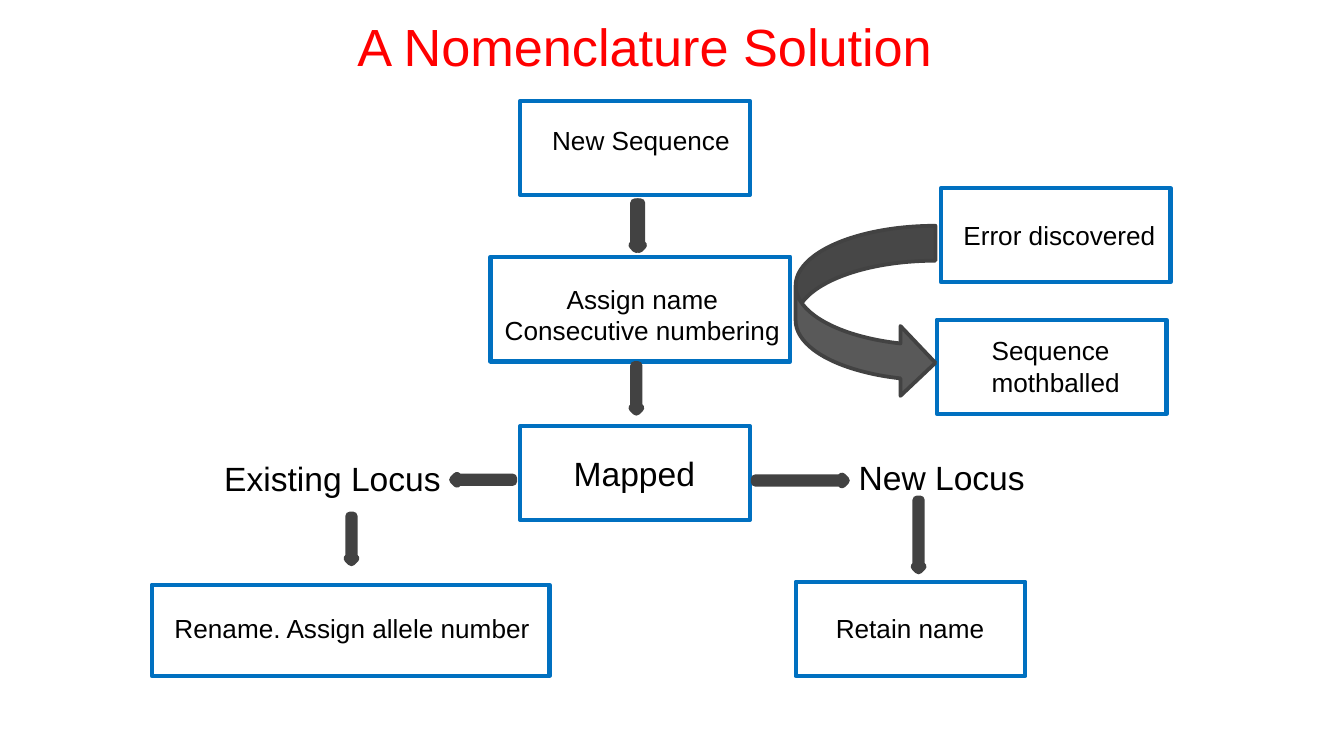
from pptx import Presentation
from pptx.dml.color import RGBColor
from pptx.enum.shapes import MSO_SHAPE as Shape
from pptx.enum.text import MSO_AUTO_SIZE as AutoSize, PP_ALIGN as Align
from pptx.util import Inches, Pt

COLORS = {"title": "FF0000", "text": "000000", "border": "0070C0",
          "arrow": "595959", "arrow_edge": "424242"}
BOX_WIDTH, BOX_HEIGHT = 1.71, 0.7
ARROW_WIDTH = 0.05


def write_text(frame, text, size=14, color="text", align=Align.LEFT, font="Arial"):
    for index, line in enumerate(text.split("\n")):
        para = frame.paragraphs[0] if index == 0 else frame.add_paragraph()
        para.alignment = align
        span = para.add_run()
        span.text = line
        span.font.name = font
        span.font.size = Pt(size)
        span.font.color.rgb = RGBColor.from_string(COLORS[color])


class FlowPage:
    """Draws the flowchart elements on one slide in a shared style."""

    def __init__(self, page):
        self.page = page

    def shape(self, kind, bounds, fill, edge, weight):
        shape = self.page.shapes.add_shape(kind, *map(Inches, bounds))
        shape.shadow.inherit = False
        if fill:
            shape.fill.solid()
            shape.fill.fore_color.rgb = RGBColor.from_string(COLORS[fill])
        else:
            shape.fill.background()
        shape.line.color.rgb = RGBColor.from_string(COLORS[edge])
        shape.line.width = Pt(weight)
        return shape

    def box(self, left, top, width=BOX_WIDTH, height=BOX_HEIGHT):
        return self.shape(Shape.RECTANGLE, (left, top, width, height), None, "border", 2.25)

    def label(self, text, bounds, **style):
        box = self.page.shapes.add_textbox(*map(Inches, bounds))
        box.text_frame.word_wrap = False
        box.text_frame.auto_size = AutoSize.SHAPE_TO_FIT_TEXT
        write_text(box.text_frame, text, **style)

    def arrow(self, left, top, length=0.34, rotation=0):
        bounds = (left, top, ARROW_WIDTH, length)
        arrow = self.shape(Shape.DOWN_ARROW, bounds, "arrow", "arrow_edge", 4.75)
        arrow.rotation = rotation

    def curved_arrow(self, bounds):
        self.shape(Shape.CURVED_RIGHT_ARROW, bounds, "arrow", "arrow_edge", 2)


def main():
    deck = Presentation()
    deck.slide_width, deck.slide_height = Inches(10), Inches(10 * 9 / 16)
    flow = FlowPage(deck.slides.add_slide(deck.slide_layouts[6]))

    flow.label("A Nomenclature Solution", (2.56, 0.06, 4.55, 0.57), size=28, color="title")

    steps = [
        ((7, 1.4), "Error discovered", (7.07, 1.58, 1.64, 0.34), {}),
        ((6.97, 2.38), "Sequence\nmothballed", (7.28, 2.44, 1.16, 0.57), {}),
        ((3.87, 0.75), "New Sequence", (4.01, 0.88, 1.53, 0.34), {}),
        ((3.65, 1.91, 2.23, 0.78), "Assign name\nConsecutive numbering",
         (3.65, 2.06, 2.26, 0.57), {"align": Align.CENTER}),
        ((3.87, 3.17), "Mapped", (4.17, 3.32, 1.11, 0.4), {"size": 18}),
        ((1.13, 4.35, 2.96, 0.68), "Rename. Assign allele number",
         (1.2, 4.51, 2.87, 0.34), {}),
        ((5.92, 4.33), "Retain name", (6.12, 4.51, 1.31, 0.34), {}),
    ]
    for box_bounds, text, text_bounds, style in steps:
        flow.box(*box_bounds)
        flow.label(text, text_bounds, **style)

    flow.curved_arrow((5.92, 1.68, 1.04, 1.28))
    for left, top in [(4.71, 2.72), (4.73, 1.51), (4.71, 1.51), (2.59, 3.84)]:
        flow.arrow(left, top)
    flow.arrow(6.81, 3.72, length=0.52)

    flow.label("Existing Locus", (1.57, 3.36, 1.83, 0.4), size=18)
    flow.label("New Locus", (6.29, 3.35, 1.45, 0.4), size=18)
    flow.arrow(3.57, 3.35, length=0.44, rotation=90)
    flow.arrow(5.93, 3.24, length=0.67, rotation=270)

    deck.save("out.pptx")


if __name__ == "__main__":
    main()
